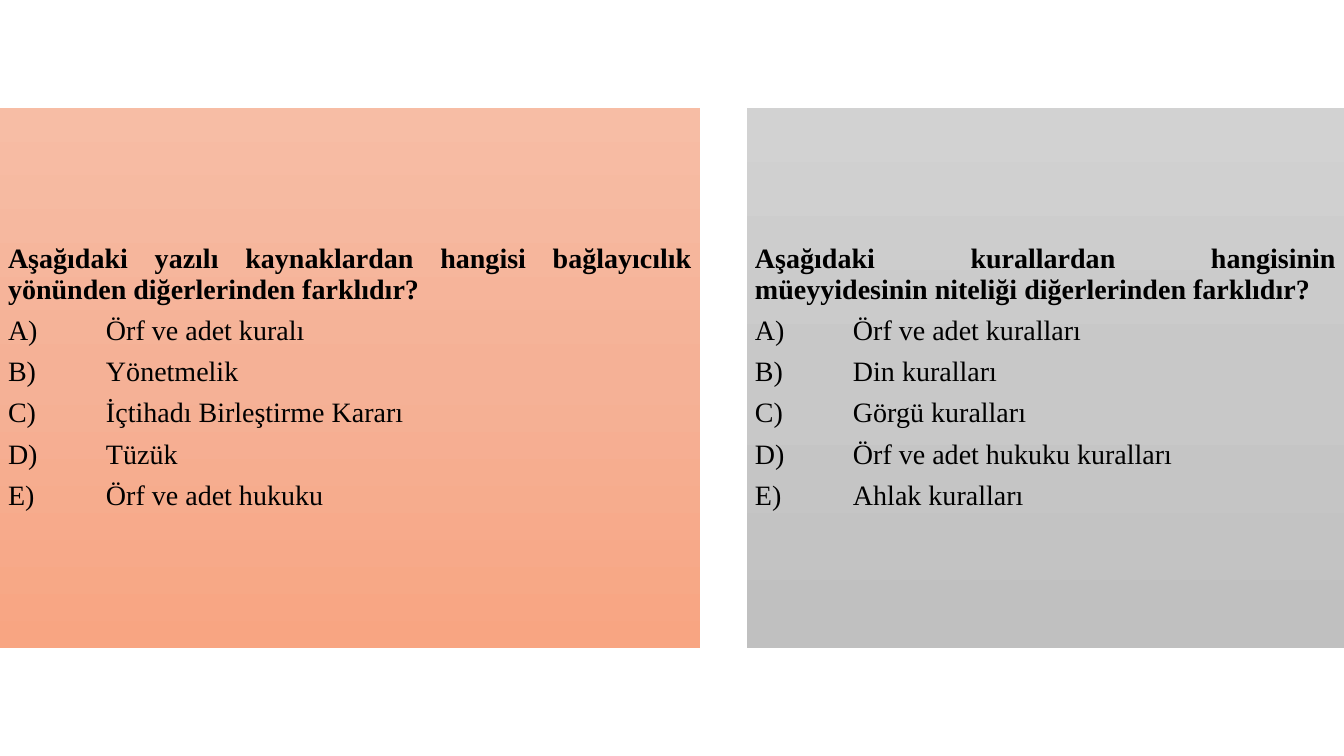
from copy import deepcopy
from lxml import etree
from pptx import Presentation
from pptx import util as u
from pptx.dml import color
from pptx.enum import shapes, text
from pptx.oxml import ns

WIDE, HIGH = 1344, 756
TOP, TALL = 108, 540


def px(n):
    return u.Emu(round(n * 914400 / 100.8))


def rgb(code):
    return color.RGBColor.from_string(code)


class Deck:
    font = "Times New Roman"
    size = 20
    ink = "000000"
    inset = 8
    gap = 11
    tab = 98

    def __init__(self):
        self.prs = Presentation()
        self.prs.slide_width, self.prs.slide_height = px(WIDE), px(HIGH)
        self.slide = self.prs.slides.add_slide(self.prs.slide_layouts[6])

    def panel(self, left, width, shades):
        box = self.slide.shapes.add_shape(
            shapes.MSO_SHAPE.RECTANGLE, px(left), px(TOP), px(width), px(TALL))
        box.shadow.inherit = False
        box.line.fill.background()
        self.blend(box, shades)
        frame = box.text_frame
        frame.word_wrap = True
        frame.vertical_anchor = text.MSO_ANCHOR.MIDDLE
        frame.margin_left = frame.margin_right = px(self.inset)
        frame.margin_top = frame.margin_bottom = px(self.inset)
        return frame

    def blend(self, box, shades):
        box.fill.gradient()
        box.fill.gradient_angle = 270
        stops = box.element.spPr.find(".//" + ns.qn("a:gsLst"))
        for _ in shades[2:]:
            stops.append(deepcopy(stops[0]))
        for i, (stop, shade) in enumerate(zip(box.fill.gradient_stops, shades)):
            stop.position = i / (len(shades) - 1)
            stop.color.rgb = rgb(shade)

    def line(self, para, words, bold=False):
        para.alignment = text.PP_ALIGN.JUSTIFY
        para.line_spacing = 0.9
        para.space_after = px(self.gap)
        tabs = etree.SubElement(para._p.get_or_add_pPr(), ns.qn("a:tabLst"))
        etree.SubElement(tabs, ns.qn("a:tab"), pos=str(px(self.tab)), algn="l")
        run = para.add_run()
        run.text = words
        run.font.name = self.font
        run.font.size = u.Pt(self.size)
        run.font.bold = bold
        run.font.color.rgb = rgb(self.ink)

    def quiz(self, left, width, shades, ask, picks):
        frame = self.panel(left, width, shades)
        self.line(frame.paragraphs[0], ask, bold=True)
        for mark, pick in zip("ABCDE", picks):
            self.line(frame.add_paragraph(), f"{mark})\t{pick}")


def main():
    deck = Deck()
    deck.quiz(
        0, 700, ["F7BDA5", "F5B196", "F8A582"],
        "Aşağıdaki yazılı kaynaklardan hangisi bağlayıcılık yönünden diğerlerinden farklıdır?",
        ["Örf ve adet kuralı", "Yönetmelik", "İçtihadı Birleştirme Kararı",
         "Tüzük", "Örf ve adet hukuku"])
    deck.quiz(
        747, 597, ["D2D2D2", "C8C8C8", "C0C0C0"],
        "Aşağıdaki kurallardan hangisinin müeyyidesinin niteliği diğerlerinden farklıdır?",
        ["Örf ve adet kuralları", "Din kuralları", "Görgü kuralları",
         "Örf ve adet hukuku kuralları", "Ahlak kuralları"])
    deck.prs.save("out.pptx")


if __name__ == "__main__":
    main()
